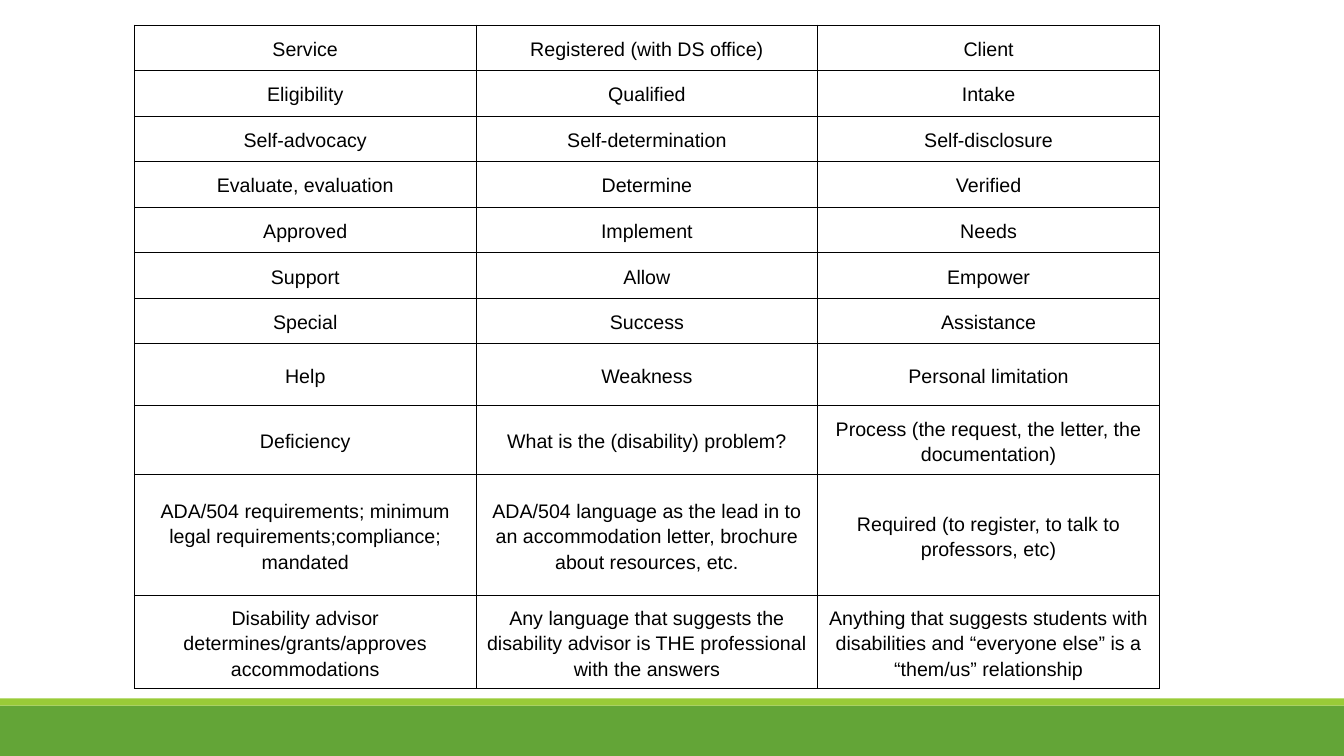
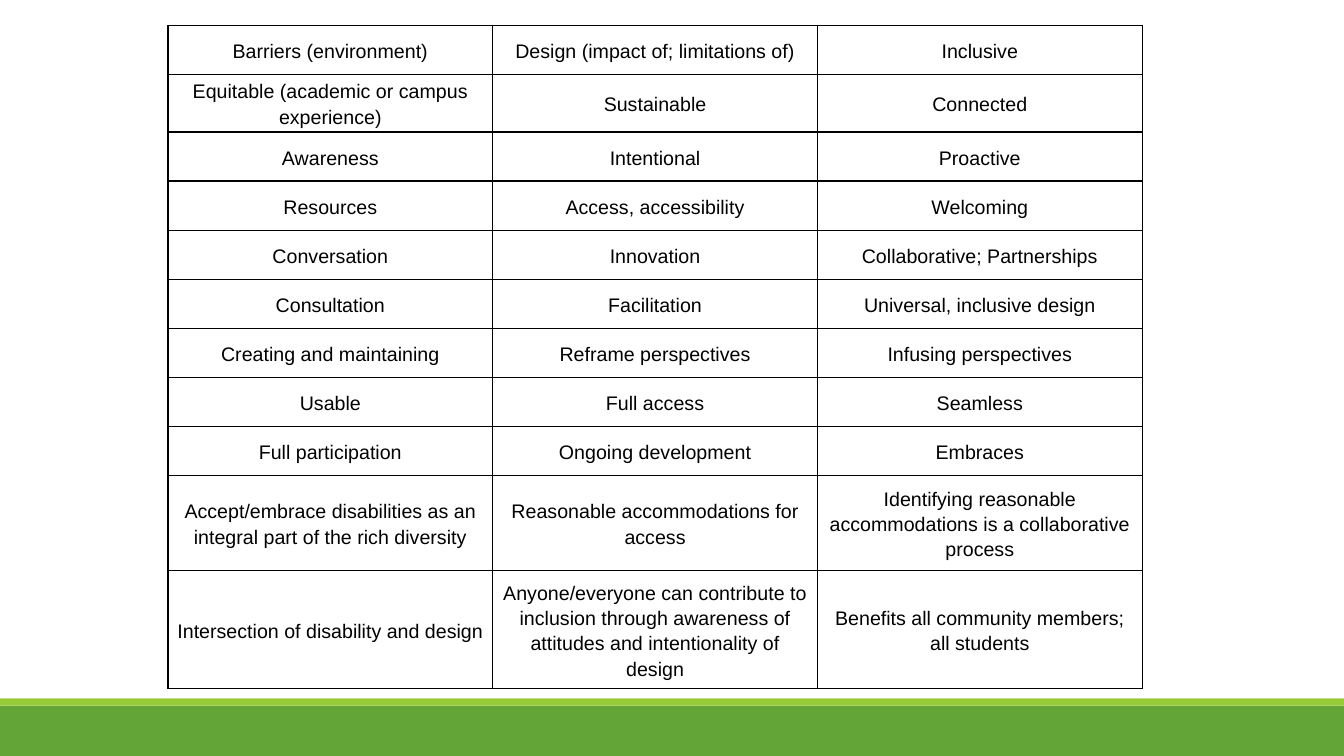
"""Build two word-list slides, each a three-column table above a green footer band."""
from dataclasses import dataclass

from lxml.etree import SubElement
from pptx import Presentation
from pptx.dml.color import RGBColor
from pptx.enum.shapes import MSO_SHAPE
from pptx.enum.text import MSO_ANCHOR, PP_ALIGN
from pptx.oxml.ns import qn
from pptx.util import Pt

EMU_PER_PX = 1524
SLIDE_SIZE = (8000, 4500)
TABLE_TOP = 150
CELL_MARGIN = 43


@dataclass(frozen=True)
class Theme:
    font: str = "Arial"
    text: str = "000000"
    border: str = "000000"
    band: str = "63A537"
    accent: str = "99CB38"
    body_size: int = 14
    line_spacing: float = 1.15
    border_width: int = 1


THEME = Theme()

BANDS = [
    {"top": 4200, "height": 300, "color": THEME.band},
    {"top": 4158, "height": 42, "color": THEME.accent},
]

WORD_TABLES = [
    {
        "left": 800,
        "column_width": 2034,
        "row_heights": [271] * 7 + [369, 411, 720, 553],
        "rows": [
            ("Service", "Registered (with DS office)", "Client"),
            ("Eligibility", "Qualified", "Intake"),
            ("Self-advocacy", "Self-determination", "Self-disclosure"),
            ("Evaluate, evaluation", "Determine", "Verified"),
            ("Approved", "Implement", "Needs"),
            ("Support", "Allow", "Empower"),
            ("Special", "Success", "Assistance"),
            ("Help", "Weakness", "Personal limitation"),
            (
                "Deficiency",
                "What is the (disability) problem?",
                "Process (the request, the letter, the documentation)",
            ),
            (
                "ADA/504 requirements; minimum legal requirements;compliance; mandated",
                "ADA/504 language as the lead in to an accommodation letter, "
                "brochure about resources, etc.",
                "Required (to register, to talk to professors, etc)",
            ),
            (
                "Disability advisor determines/grants/approves accommodations",
                "Any language that suggests the disability advisor is THE "
                "professional with the answers",
                "Anything that suggests students with disabilities and "
                "“everyone else” is a “them/us” relationship",
            ),
        ],
    },
    {
        "left": 1000,
        "column_width": 1933,
        "row_heights": [292, 344] + [292] * 7 + [567, 703],
        "rows": [
            ("Barriers (environment)", "Design (impact of; limitations of)", "Inclusive"),
            ("Equitable (academic or campus experience)", "Sustainable", "Connected"),
            ("Awareness", "Intentional", "Proactive"),
            ("Resources", "Access, accessibility", "Welcoming"),
            ("Conversation", "Innovation", "Collaborative; Partnerships"),
            ("Consultation", "Facilitation", "Universal, inclusive design"),
            ("Creating and maintaining", "Reframe perspectives", "Infusing perspectives"),
            ("Usable", "Full access", "Seamless"),
            ("Full participation", "Ongoing development", "Embraces"),
            (
                "Accept/embrace disabilities as an integral part of the rich diversity",
                "Reasonable accommodations for access",
                "Identifying reasonable accommodations is a collaborative process",
            ),
            (
                "Intersection of disability and design",
                "Anyone/everyone can contribute to inclusion through awareness "
                "of attitudes and intentionality of design",
                "Benefits all community members; all students",
            ),
        ],
    },
]


def px(length):
    """Convert whole pixels to EMU."""
    return length * EMU_PER_PX


def write_text(text_frame, text, *, size=THEME.body_size, color=THEME.text,
               align=PP_ALIGN.CENTER, spacing=THEME.line_spacing):
    """Write one formatted paragraph."""
    paragraph = text_frame.paragraphs[0]
    paragraph.alignment = align
    paragraph.line_spacing = spacing
    run = paragraph.add_run()
    run.text = text
    run.font.name = THEME.font
    run.font.size = Pt(size)
    run.font.bold = False
    run.font.color.rgb = RGBColor.from_string(color)


def add_borders(cell):
    """Draw a solid line on all four sides of a cell."""
    properties = cell._tc.get_or_add_tcPr()
    for position, side in enumerate(("a:lnL", "a:lnR", "a:lnT", "a:lnB")):
        line = SubElement(properties, qn(side), w=str(Pt(THEME.border_width)))
        fill = SubElement(line, qn("a:solidFill"))
        SubElement(fill, qn("a:srgbClr"), val=THEME.border)
        properties.insert(position, line)


def add_bands(slide):
    """Draw the footer bands across the full slide width."""
    for band in BANDS:
        shape = slide.shapes.add_shape(
            MSO_SHAPE.RECTANGLE, 0, px(band["top"]),
            px(SLIDE_SIZE[0]), px(band["height"]),
        )
        shape.shadow.inherit = False
        shape.fill.solid()
        shape.fill.fore_color.rgb = RGBColor.from_string(band["color"])
        shape.line.fill.background()


def add_word_table(slide, content):
    """Add a bordered table with centred words."""
    rows = content["rows"]
    heights = content["row_heights"]
    columns = len(rows[0])
    table = slide.shapes.add_table(
        len(rows), columns, px(content["left"]), px(TABLE_TOP),
        px(content["column_width"] * columns), px(sum(heights)),
    ).table
    table.first_row = False
    table.horz_banding = False
    for column in table.columns:
        column.width = px(content["column_width"])
    for row, height, words in zip(table.rows, heights, rows):
        row.height = px(height)
        for cell, text in zip(row.cells, words):
            cell.margin_left = cell.margin_right = px(CELL_MARGIN)
            cell.margin_top = cell.margin_bottom = 0
            cell.vertical_anchor = MSO_ANCHOR.MIDDLE
            cell.fill.background()
            add_borders(cell)
            write_text(cell.text_frame, text)


def main():
    """Build and save the presentation."""
    presentation = Presentation()
    presentation.slide_width, presentation.slide_height = map(px, SLIDE_SIZE)
    blank_layout = presentation.slide_layouts.get_by_name("Blank")
    for content in WORD_TABLES:
        slide = presentation.slides.add_slide(blank_layout)
        add_bands(slide)
        add_word_table(slide, content)
    presentation.save("out.pptx")


if __name__ == "__main__":
    main()
